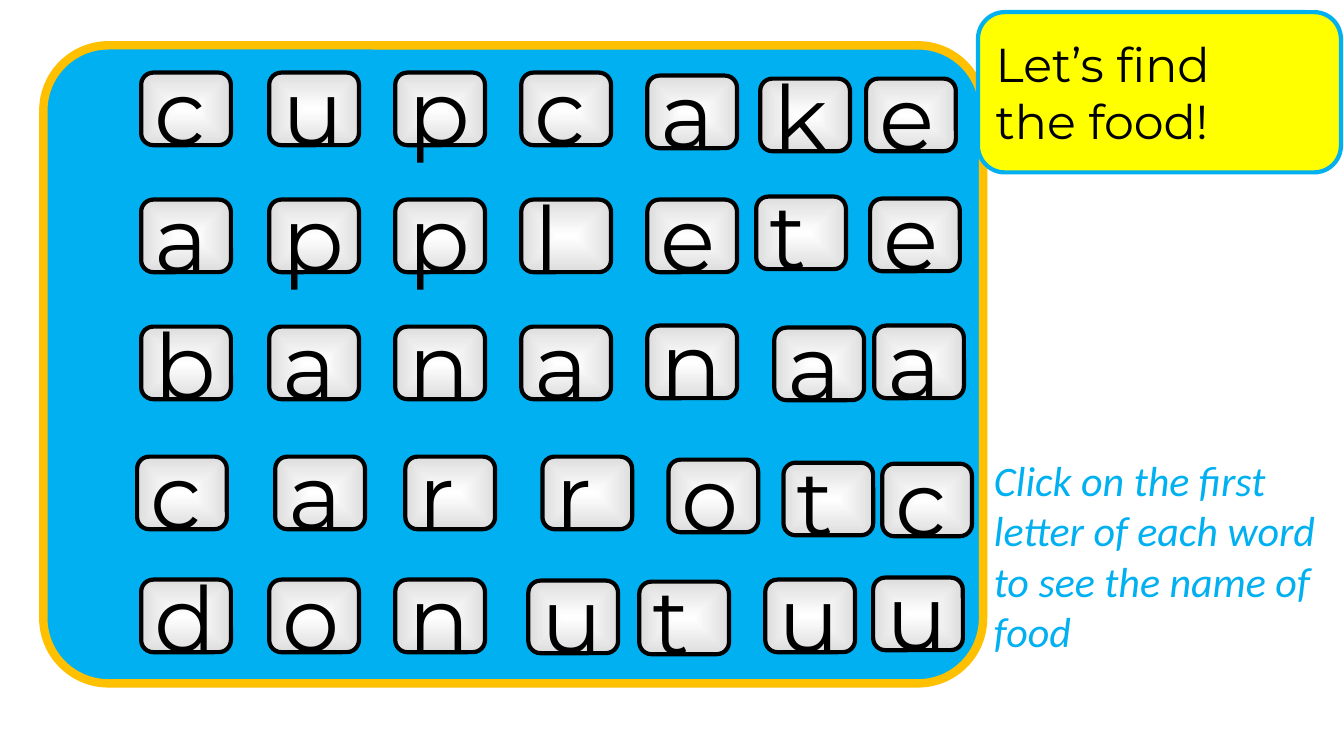
from lxml import etree
from pptx import Presentation
from pptx.dml.color import RGBColor
from pptx.enum import shapes, text
from pptx.util import Inches, Pt

BLUE = RGBColor(0x00, 0xB0, 0xF0)
GOLD = RGBColor(0xFF, 0xC0, 0x00)
YELLOW = RGBColor(0xFF, 0xFF, 0x00)
BLACK = RGBColor(0x00, 0x00, 0x00)

# Each row: its letters, top of the row, then left edges and downward shifts
# for the tiles that leave the regular columns, keyed by column.
COLUMNS = [1.4, 2.67, 3.92, 5.17, 6.42]
ROWS = [
    ("cupcake", 0.72, {5: 7.54, 6: 8.59}, {4: 0.03, 5: 0.06, 6: 0.06}),
    ("applete", 1.98, {5: 7.5, 6: 8.63}, {5: -0.03, 6: -0.01}),
    ("bananaa", 3.24, {5: 7.68, 6: 8.67}, {4: -0.01, 5: 0.01, 6: -0.01}),
    ("carrotc", 4.53,
     {0: 1.36, 1: 2.73, 2: 4.02, 3: 5.38, 4: 6.63, 5: 7.77, 6: 8.75},
     {4: 0.03, 5: 0.06, 6: 0.07}),
    ("donutuu", 5.75, {3: 5.24, 4: 6.34, 5: 7.59, 6: 8.66},
     {3: 0.01, 4: 0.02, 6: -0.02}),
]
TILE_SIZE = (0.89, 0.72)
PANEL = (0.43, 0.45, 9.32, 6.33)
BADGE = (9.7, 0.12, 3.6, 1.59)
BADGE_LINES = ["Let’s find", "the food!"]
HINT_BOX = (9.76, 4.46, 3.39, 2.12)
HINT = "Click on the first letter of each word to see the name of food"

TILE_GRADIENT = """
<a:gradFill xmlns:a="http://schemas.openxmlformats.org/drawingml/2006/main" rotWithShape="1">
  <a:gsLst>
    <a:gs pos="0"><a:srgbClr val="FFFFFF"/></a:gs>
    <a:gs pos="100000"><a:srgbClr val="DDDDDD"/></a:gs>
  </a:gsLst>
  <a:path path="shape"><a:fillToRect l="50000" t="50000" r="50000" b="50000"/></a:path>
</a:gradFill>"""


def add_round_box(s, box, line, width, fill=None, corner=0.167):
    """Add a rounded rectangle; without a fill colour it gets the tile gradient."""
    sp = s.shapes.add_shape(shapes.MSO_SHAPE.ROUNDED_RECTANGLE, *map(Inches, box))
    sp.adjustments[0] = corner
    sp.shadow.inherit = False
    sp.line.color.rgb = line
    sp.line.width = Pt(width)
    if fill is None:
        sp.fill.background()
        plain = sp._element.spPr.find("{*}noFill")
        sp._element.spPr.replace(plain, etree.fromstring(TILE_GRADIENT))
    else:
        sp.fill.solid()
        sp.fill.fore_color.rgb = fill
    return sp


def write(sp, lines, color, frame, **font):
    tf = sp.text_frame
    for name, value in frame.items():
        setattr(tf, name, value)
    for i, line in enumerate(lines):
        p = tf.paragraphs[0] if i == 0 else tf.add_paragraph()
        p.alignment = text.PP_ALIGN.LEFT
        r = p.add_run()
        r.text = line
        r.font.color.rgb = color
        for name, value in font.items():
            setattr(r.font, name, value)


def main():
    prs = Presentation()
    prs.slide_width, prs.slide_height = Inches(13.33), Inches(7.5)
    s = prs.slides.add_slide(prs.slide_layouts[6])
    centred = {"word_wrap": False, "vertical_anchor": text.MSO_ANCHOR.MIDDLE}

    add_round_box(s, PANEL, GOLD, 6, BLUE, 0.102)

    for letters, top, lefts, shifts in ROWS:
        for col, letter in enumerate(letters):
            left = lefts[col] if col in lefts else COLUMNS[col]
            box = (left, top + shifts.get(col, 0), *TILE_SIZE)
            tile = add_round_box(s, box, BLACK, 3)
            write(tile, [letter], BLACK, centred, name="Montserrat", size=Pt(65))

    badge = add_round_box(s, BADGE, BLUE, 3, YELLOW)
    write(badge, BADGE_LINES, BLACK, {**centred, "margin_right": Inches(0.24)},
          name="Montserrat", size=Pt(34))

    hint = s.shapes.add_textbox(*map(Inches, HINT_BOX))
    write(hint, [HINT], BLUE,
          {"word_wrap": True, "auto_size": text.MSO_AUTO_SIZE.SHAPE_TO_FIT_TEXT},
          name="Calibri", size=Pt(30), italic=True)

    prs.save("out.pptx")


if __name__ == "__main__":
    main()
